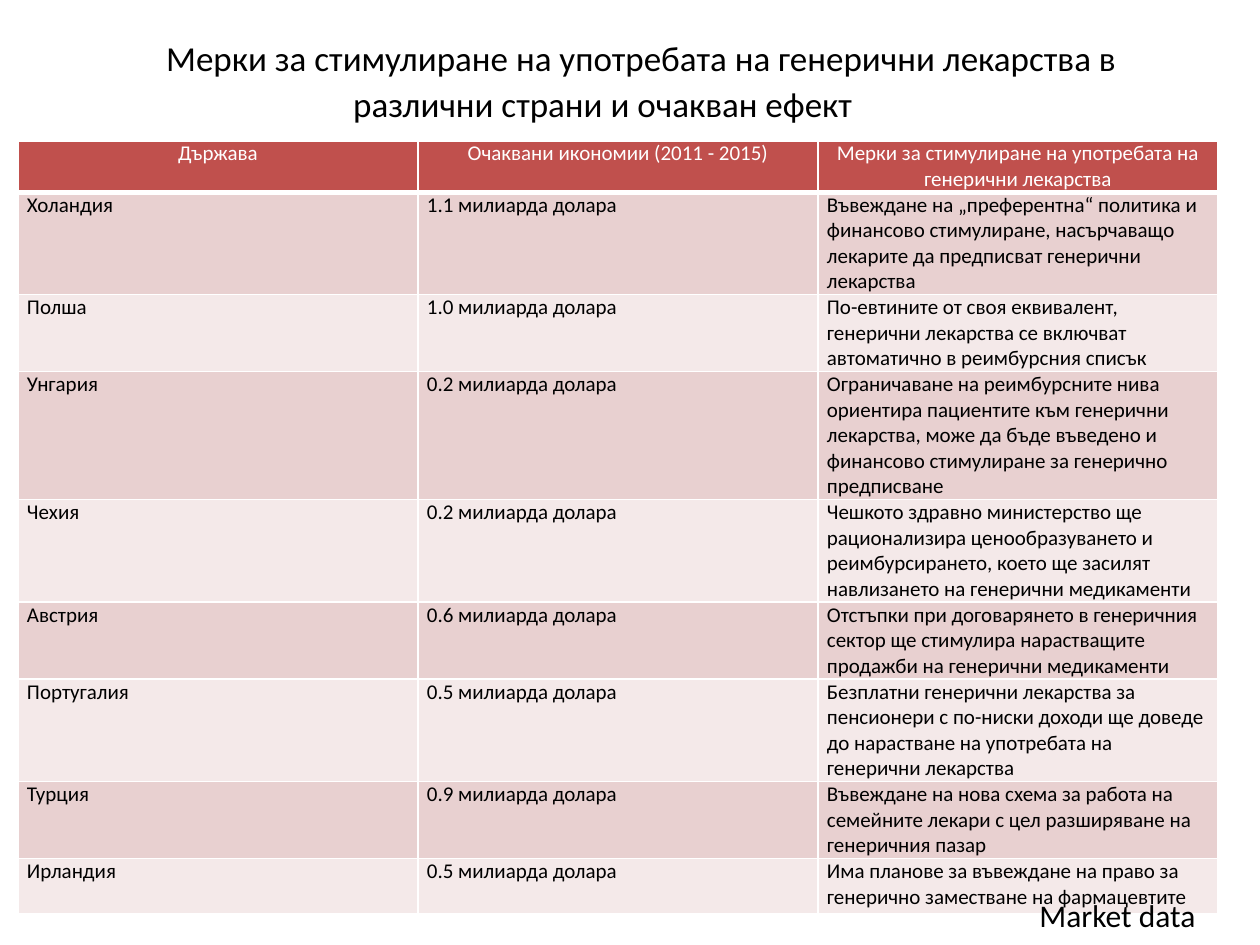
from lxml import etree
from pptx import Presentation
from pptx.dml.color import RGBColor
from pptx.enum.text import MSO_ANCHOR, MSO_AUTO_SIZE, PP_ALIGN
from pptx.oxml.ns import qn
from pptx.util import Emu, Pt

CENTER, LEFT = PP_ALIGN.CENTER, PP_ALIGN.LEFT
PX = 914400 // 126
WHITE, BLACK, RED = "FFFFFF", "000000", "C0504D"
BANDS = ["E8D0D0", "F4E9E9"]


def add_run(paragraph, text, size, color):
    run = paragraph.add_run()
    run.text = text
    run.font.name = "Calibri"
    run.font.size = Pt(size)
    run.font.bold = False
    run.font.color.rgb = RGBColor.from_string(color)


def add_borders(cell, bottom_width):
    """Draw white cell edges, 1 pt wide except for the bottom one."""
    properties = cell._tc.get_or_add_tcPr()
    edges = [("a:lnL", 1), ("a:lnR", 1), ("a:lnT", 1), ("a:lnB", bottom_width)]
    for position, (tag, width) in enumerate(edges):
        line = etree.Element(qn(tag), w=str(Pt(width)))
        fill = etree.SubElement(line, qn("a:solidFill"))
        etree.SubElement(fill, qn("a:srgbClr"), val=WHITE)
        properties.insert(position, line)


prs = Presentation()
prs.slide_width, prs.slide_height = Emu(1260 * PX), Emu(945 * PX)
slide = prs.slides.add_slide(prs.slide_layouts[5])

# Title, with its first line shifted to the right
title = slide.shapes.title
title.left, title.top = Emu(18 * PX), Emu(15 * PX)
title.width, title.height = Emu(1170 * PX), Emu(127 * PX)
title.text_frame.auto_size = MSO_AUTO_SIZE.NONE
title.text_frame.vertical_anchor = MSO_ANCHOR.MIDDLE
heading = title.text_frame.paragraphs[0]
heading.alignment = CENTER
heading.line_spacing = 1.09
heading._p.get_or_add_pPr().set("indent", str(77 * PX))
add_run(heading, "Мерки за стимулиране на употребата на генерични лекарства "
        "в различни страни и очакван ефект", 20, BLACK)

# Measures by country: row height, country, savings in billions, measure
header = ["Държава", "Очаквани икономии (2011 - 2015)",
          "Мерки за стимулиране на употребата на генерични лекарства"]
measures = [
    (102, "Холандия", "1.1", "Въвеждане на „преферентна“ политика и финансово "
     "стимулиране, насърчаващо лекарите да предписват генерични лекарства"),
    (77, "Полша", "1.0", "По-евтините от своя еквивалент, генерични лекарства "
     "се включват автоматично в реимбурсния списък"),
    (128, "Унгария", "0.2", "Ограничаване на реимбурсните нива ориентира "
     "пациентите към генерични лекарства, може да бъде въведено и финансово "
     "стимулиране за генерично предписване"),
    (102, "Чехия", "0.2", "Чешкото здравно министерство ще рационализира "
     "ценообразуването и реимбурсирането, което ще засилят навлизането на "
     "генерични медикаменти"),
    (77, "Австрия", "0.6", "Отстъпки при договарянето в генеричния сектор ще "
     "стимулира нарастващите продажби на генерични медикаменти"),
    (102, "Португалия", "0.5", "Безплатни генерични лекарства за пенсионери с "
     "по-ниски доходи ще доведе до нарастване на употребата на генерични "
     "лекарства"),
    (77, "Турция", "0.9", "Въвеждане на нова схема за работа на семейните "
     "лекари с цел разширяване на генеричния пазар"),
    (55, "Ирландия", "0.5", "Има планове за въвеждане на право за генерично "
     "заместване на фармацевтите"),
]
rows = [(51, header)]
for height, country, savings, measure in measures:
    rows.append((height, [country, f"{savings} милиарда долара", measure]))

table = slide.shapes.add_table(
    len(rows), len(header), Emu(18 * PX), Emu(141 * PX), Emu(1200 * PX),
    Emu(sum(height for height, _ in rows) * PX)).table
for column in table.columns:
    column.width = Emu(400 * PX)

for row_index, (height, texts) in enumerate(rows):
    is_header = row_index == 0
    table.rows[row_index].height = Emu(height * PX)
    for column_index, text in enumerate(texts):
        cell = table.cell(row_index, column_index)
        cell.margin_left = cell.margin_right = Emu(9 * PX)
        cell.margin_top = cell.margin_bottom = 0
        cell.fill.solid()
        cell.fill.fore_color.rgb = RGBColor.from_string(
            RED if is_header else BANDS[(row_index - 1) % 2])
        add_borders(cell, 3 if is_header else 1)
        paragraph = cell.text_frame.paragraphs[0]
        paragraph.alignment = CENTER if is_header else LEFT
        add_run(paragraph, text, 12, WHITE if is_header else BLACK)

# Data source
source = slide.shapes.add_textbox(
    Emu(1027 * PX), Emu(890 * PX), Emu(193 * PX), Emu(50 * PX)).text_frame
source.word_wrap = True
add_run(source.paragraphs[0], "Market data", 18, BLACK)

prs.save("out.pptx")
